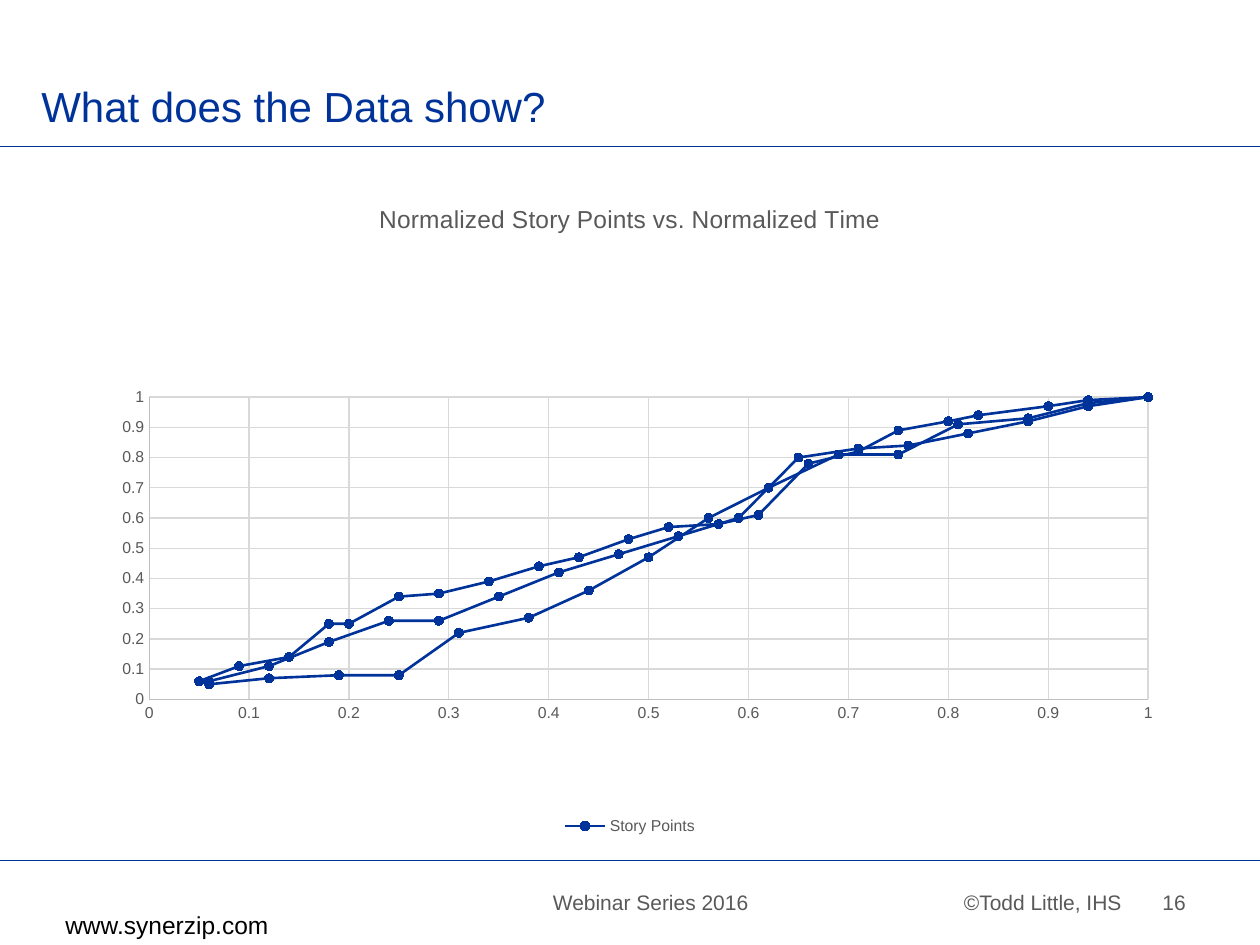
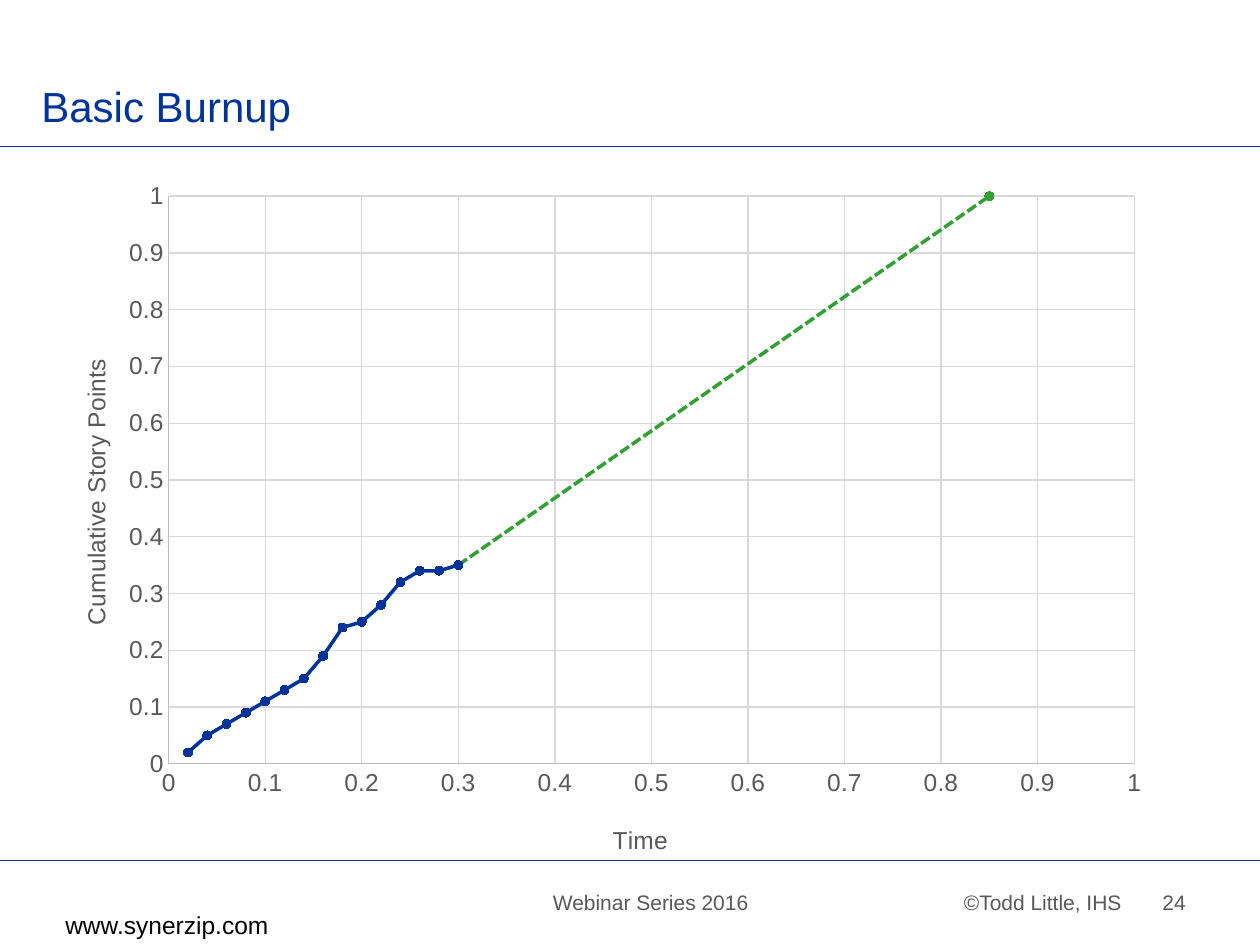
from dataclasses import dataclass

import pptx
import pptx.chart.data
import pptx.dml.color
import pptx.enum.chart
import pptx.enum.dml
import pptx.enum.shapes
import pptx.enum.text
import pptx.oxml
import pptx.oxml.ns
import pptx.util

Pt = pptx.util.Pt
qn = pptx.oxml.ns.qn
ALIGN = pptx.enum.text.PP_ALIGN
ANCHOR = pptx.enum.text.MSO_ANCHOR

# A release is a pair of lists: normalized time, normalized story points.
RELEASES = [
    ([0.05, 0.09, 0.14, 0.18, 0.2, 0.25, 0.29, 0.34, 0.39, 0.43, 0.48,
      0.52, 0.57, 0.61, 0.66, 0.71, 0.75, 0.8, 0.83, 0.9, 0.94, 1],
     [0.06, 0.11, 0.14, 0.25, 0.25, 0.34, 0.35, 0.39, 0.44, 0.47, 0.53,
      0.57, 0.58, 0.61, 0.78, 0.82, 0.89, 0.92, 0.94, 0.97, 0.99, 1]),
    ([round(sprint / 16, 2) for sprint in range(1, 17)],
     [0.05, 0.07, 0.08, 0.08, 0.22, 0.27, 0.36, 0.47, 0.6, 0.7, 0.81,
      0.81, 0.91, 0.93, 0.98, 1]),
    ([round(sprint / 17, 2) for sprint in range(1, 18)],
     [0.06, 0.11, 0.19, 0.26, 0.26, 0.34, 0.42, 0.48, 0.54, 0.6, 0.8,
      0.83, 0.84, 0.88, 0.92, 0.97, 1]),
]
BURNUP = [0.02, 0.05, 0.07, 0.09, 0.11, 0.13, 0.15, 0.19, 0.24, 0.25, 0.28,
          0.32, 0.34, 0.34, 0.35]


def join_releases(releases):
    """Chain the releases into one series, with a gap between neighbours."""
    points = []
    for times, story_points in releases:
        if points:
            points.append((0, None))
        points.extend(zip(times, story_points))
    return points


SLIDES = [
    {
        "title": "What does the Data show?",
        "number": 16,
        "box": (36, 102.24, 648, 378),
        "plot": (0.076, 0.33, 0.881, 0.457),
        "axis_size": 9,
        "line_width": 1.5,
        "chart_title": "Normalized Story Points vs. Normalized Time",
        "legend": True,
        "series": [("Story Points", "blue", False, join_releases(RELEASES))],
    },
    {
        "title": "Basic Burnup",
        "number": 24,
        "box": (24, 96, 640.8, 402.48),
        "plot": (0.113, 0.04, 0.861, 0.806),
        "axis_size": 14,
        "line_width": 2,
        "axis_titles": [("Time", (0.505, 0.925), 0),
                        ("Cumulative Story Points", (0.03, 0.265), -90)],
        "series": [
            ("Series 1", "blue", False,
             [(round(0.02 * step, 2), done)
              for step, done in enumerate(BURNUP, start=1)]),
            ("Series 2", "green", True, [(0.3, 0.35), (0.85, 1)]),
        ],
    },
]
EVENT = "Webinar Series 2016"
COPYRIGHT = "©Todd Little, IHS"
SITE = "www.synerzip.com"


@dataclass(frozen=True)
class Theme:
    font: str = "Arial"
    blue: str = "003399"
    green: str = "32A032"
    grey: str = "595959"
    black: str = "000000"
    axis: str = "BFBFBF"
    grid: str = "D9D9D9"
    title_size: float = 24
    site_size: float = 14
    footer_size: float = 12
    chart_title_size: float = 14
    rule_width: float = 0.5
    axis_width: float = 0.75
    marker_size: int = 5


THEME = Theme()
WIDTH, HEIGHT = 720, 540
RULES = (83.52, 491.76)


def rgb(color):
    return pptx.dml.color.RGBColor.from_string(color)


def set_font(font, size, color=THEME.grey):
    font.name = THEME.font
    font.size = Pt(size)
    font.bold = False
    font.color.rgb = rgb(color)


def set_line(line, color, width):
    line.color.rgb = rgb(color)
    line.width = Pt(width)


def add_text(slide, text, box, size, color=THEME.grey, align=ALIGN.LEFT,
             anchor=ANCHOR.TOP, wrap=True, inset=7.2, tab=None):
    frame = slide.shapes.add_textbox(*map(Pt, box)).text_frame
    frame.word_wrap = wrap
    frame.vertical_anchor = anchor
    frame.margin_left = Pt(inset)
    paragraph = frame.paragraphs[0]
    paragraph.alignment = align
    if tab:
        stops = pptx.oxml.parse_xml(
            f'<a:tabLst {pptx.oxml.ns.nsdecls("a")}>'
            f'<a:tab pos="{Pt(tab)}" algn="l"/></a:tabLst>')
        paragraph._p.get_or_add_pPr().append(stops)
    run = paragraph.add_run()
    run.text = text
    set_font(run.font, size, color)


def add_rule(slide, y):
    rule = slide.shapes.add_connector(
        pptx.enum.shapes.MSO_CONNECTOR.STRAIGHT, 0, Pt(y), Pt(WIDTH), Pt(y))
    set_line(rule.line, THEME.blue, THEME.rule_width)
    rule._element.spPr.append(pptx.oxml.parse_xml(
        f'<a:effectLst {pptx.oxml.ns.nsdecls("a")}/>'))


def add_frame(slide, title, number):
    """Add the title, rules and footer that every slide carries."""
    for y in RULES:
        add_rule(slide, y)
    add_text(slide, EVENT, (270, 504.72, 203.76, 21.6), THEME.footer_size,
             align=ALIGN.CENTER)
    add_text(slide, f"{COPYRIGHT}\t{number}", (540, 504.72, 150, 21.6),
             THEME.footer_size, inset=10.8, tab=113.5)
    add_text(slide, SITE, (30.24, 516.24, 131.76, 24.48), THEME.site_size,
             color=THEME.black, wrap=False)
    add_text(slide, title, (16.56, 10.8, 596.16, 67.68), THEME.title_size,
             color=THEME.blue, anchor=ANCHOR.BOTTOM)


def set_layout(element, position, index):
    """Place a chart part by fractions: x, y and, for the plot, w, h."""
    layout = element.find(qn("c:layout"))
    if layout is not None:
        element.remove(layout)
    target = '<c:layoutTarget val="inner"/>' if len(position) == 4 else ""
    modes = "".join(f'<c:{key}Mode val="edge"/>' for key in "xy")
    sizes = "".join(f'<c:{key} val="{value}"/>'
                    for key, value in zip("xywh", position))
    element.insert(index, pptx.oxml.parse_xml(
        f'<c:layout {pptx.oxml.ns.nsdecls("c")}><c:manualLayout>'
        f'{target}{modes}{sizes}</c:manualLayout></c:layout>'))


def fill_title(title, text, size):
    run = title.text_frame.paragraphs[0].add_run()
    run.text = text
    set_font(run.font, size)


def style_axis(axis, size):
    axis.minimum_scale, axis.maximum_scale, axis.major_unit = 0, 1, 0.1
    axis.major_tick_mark = pptx.enum.chart.XL_TICK_MARK.NONE
    axis.minor_tick_mark = pptx.enum.chart.XL_TICK_MARK.NONE
    axis.has_major_gridlines = True
    set_line(axis.major_gridlines.format.line, THEME.grid, THEME.axis_width)
    set_line(axis.format.line, THEME.axis, THEME.axis_width)
    set_font(axis.tick_labels.font, size)


def style_series(series, color, width, dashed):
    set_line(series.format.line, color, width)
    if dashed:
        series.format.line.dash_style = pptx.enum.dml.MSO_LINE.SQUARE_DOT
    marker = series.marker
    marker.style = pptx.enum.chart.XL_MARKER_STYLE.CIRCLE
    marker.size = THEME.marker_size
    marker.format.fill.solid()
    marker.format.fill.fore_color.rgb = rgb(color)
    set_line(marker.format.line, color, THEME.axis_width)


def drop_gaps(series, points):
    """Leave out the y value of each gap, so that the line breaks there."""
    for index, (_, done) in enumerate(points):
        if done is None:
            for point in series._element.xpath(
                    f"c:yVal//c:pt[@idx='{index}']"):
                point.getparent().remove(point)


def add_scatter(slide, content):
    data = pptx.chart.data.XyChartData()
    for name, _, _, points in content["series"]:
        entry = data.add_series(name)
        for time, done in points:
            entry.add_data_point(time, done)
    chart = slide.shapes.add_chart(
        pptx.enum.chart.XL_CHART_TYPE.XY_SCATTER_LINES,
        *map(Pt, content["box"]), data).chart
    set_font(chart.font, content["axis_size"])
    plot = chart.plots[0]
    plot.vary_by_categories = False
    set_layout(chart._chartSpace.chart.plotArea, content["plot"], 0)

    for series, (_, color, dashed, points) in zip(plot.series,
                                                  content["series"]):
        style_series(series, getattr(THEME, color), content["line_width"],
                     dashed)
        drop_gaps(series, points)

    axes = (chart.category_axis, chart.value_axis)
    for axis in axes:
        style_axis(axis, content["axis_size"])
    for axis, (text, position, angle) in zip(axes,
                                             content.get("axis_titles", [])):
        fill_title(axis.axis_title, text, THEME.chart_title_size)
        title = axis.axis_title._element
        title.xpath(".//a:bodyPr")[0].set("rot", str(angle * 60000))
        set_layout(title, position, 1)

    chart.has_title = "chart_title" in content
    if chart.has_title:
        fill_title(chart.chart_title, content["chart_title"],
                   THEME.chart_title_size)
    chart.has_legend = content.get("legend", False)
    if chart.has_legend:
        chart.legend.position = pptx.enum.chart.XL_LEGEND_POSITION.BOTTOM
        chart.legend.include_in_layout = False
        set_font(chart.legend.font, content["axis_size"])


def main():
    deck = pptx.Presentation()
    deck.slide_width, deck.slide_height = Pt(WIDTH), Pt(HEIGHT)
    for content in SLIDES:
        slide = deck.slides.add_slide(deck.slide_layouts[6])
        add_frame(slide, content["title"], content["number"])
        add_scatter(slide, content)
    deck.save("out.pptx")


if __name__ == "__main__":
    main()
